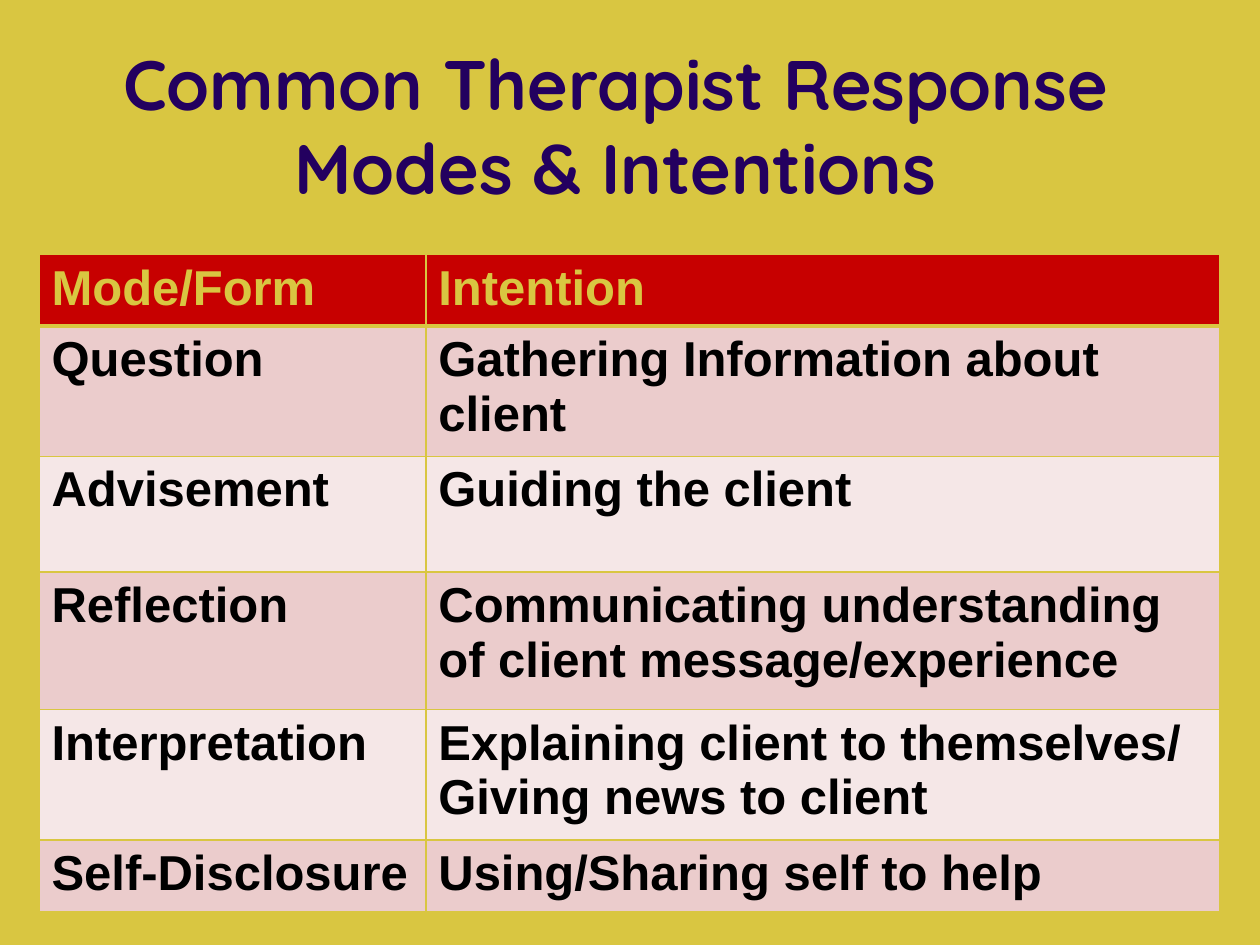
from dataclasses import dataclass

from lxml import etree
from pptx import Presentation
from pptx import util as u
from pptx.dml.color import RGBColor
from pptx.enum import text
from pptx.oxml.ns import qn


@dataclass(frozen=True)
class Theme:
    background: str = "D9C641"
    title: str = "23005F"
    header: str = "C70000"
    bands: tuple = ("EBCCCC", "F5E7E7")
    body: str = "000000"
    title_font: str = "Quicksand"
    body_font: str = "Arial"
    title_size: int = 40
    body_size: int = 28
    rule: int = 1
    header_rule: int = 3


def write(tf, content, *, font, size, color, bold=True, align=text.PP_ALIGN.LEFT):
    p = tf.paragraphs[0]
    p.alignment = align
    r = p.add_run()
    r.text = content
    r.font.name = font
    r.font.size = u.Pt(size)
    r.font.bold = bold
    r.font.color.rgb = RGBColor.from_string(color)


class Deck:
    def __init__(self, theme):
        self.theme = theme
        self.prs = Presentation()
        self.prs.slide_width, self.prs.slide_height = u.Inches(10), u.Inches(7.5)
        self.s = self.prs.slides.add_slide(self.prs.slide_layouts[6])
        fill = self.s.background.fill
        fill.solid()
        fill.fore_color.rgb = RGBColor.from_string(theme.background)

    def title(self, content, box):
        t = self.theme
        sp = self.s.shapes.add_textbox(*map(u.Inches, box))
        tf = sp.text_frame
        tf.word_wrap = True
        tf.vertical_anchor = text.MSO_ANCHOR.MIDDLE
        write(tf, content, font=t.title_font, size=t.title_size,
              color=t.title, align=text.PP_ALIGN.CENTER)

    def borders(self, cell, **widths):
        tc_pr = cell._tc.get_or_add_tcPr()
        for i, side in enumerate("LRTB"):
            width = widths.get(side, self.theme.rule)
            ln = etree.Element(qn(f"a:ln{side}"), w=str(u.Pt(width)))
            solid = etree.SubElement(ln, qn("a:solidFill"))
            etree.SubElement(solid, qn("a:srgbClr"), val=self.theme.background)
            tc_pr.insert(i, ln)

    def table(self, rows, left, top, widths, heights):
        t = self.theme
        box = map(u.Inches, (left, top, sum(widths), sum(heights)))
        table = self.s.shapes.add_table(len(rows), len(widths), *box).table
        for column, width in zip(table.columns, widths):
            column.width = u.Inches(width)
        for i, (row, height) in enumerate(zip(rows, heights)):
            table.rows[i].height = u.Inches(height)
            fill = t.bands[(i - 1) % 2] if i else t.header
            color = t.body if i else t.background
            edges = {0: {"B": t.header_rule}, 1: {"T": t.header_rule}}.get(i, {})
            for j, content in enumerate(row):
                cell = table.cell(i, j)
                cell.fill.solid()
                cell.fill.fore_color.rgb = RGBColor.from_string(fill)
                self.borders(cell, **edges)
                write(cell.text_frame, content, font=t.body_font,
                      size=t.body_size, color=color)


MODES = [
    ("Mode/Form", "Intention"),
    ("Question", "Gathering Information about client"),
    ("Advisement", "Guiding the client"),
    ("Reflection", "Communicating understanding of client message/experience"),
    ("Interpretation", "Explaining client to themselves/ Giving news to client"),
    ("Self-Disclosure", "Using/Sharing self to help"),
]


def main():
    deck = Deck(Theme())
    deck.title("Common Therapist Response Modes & Intentions", (0.36, 0.36, 9.05, 1.25))
    deck.table(MODES, 0.31, 2.02, (3.07, 6.3), (0.53, 0.97, 0.92, 1.09, 0.97, 0.53))
    deck.prs.save("out.pptx")


if __name__ == "__main__":
    main()
